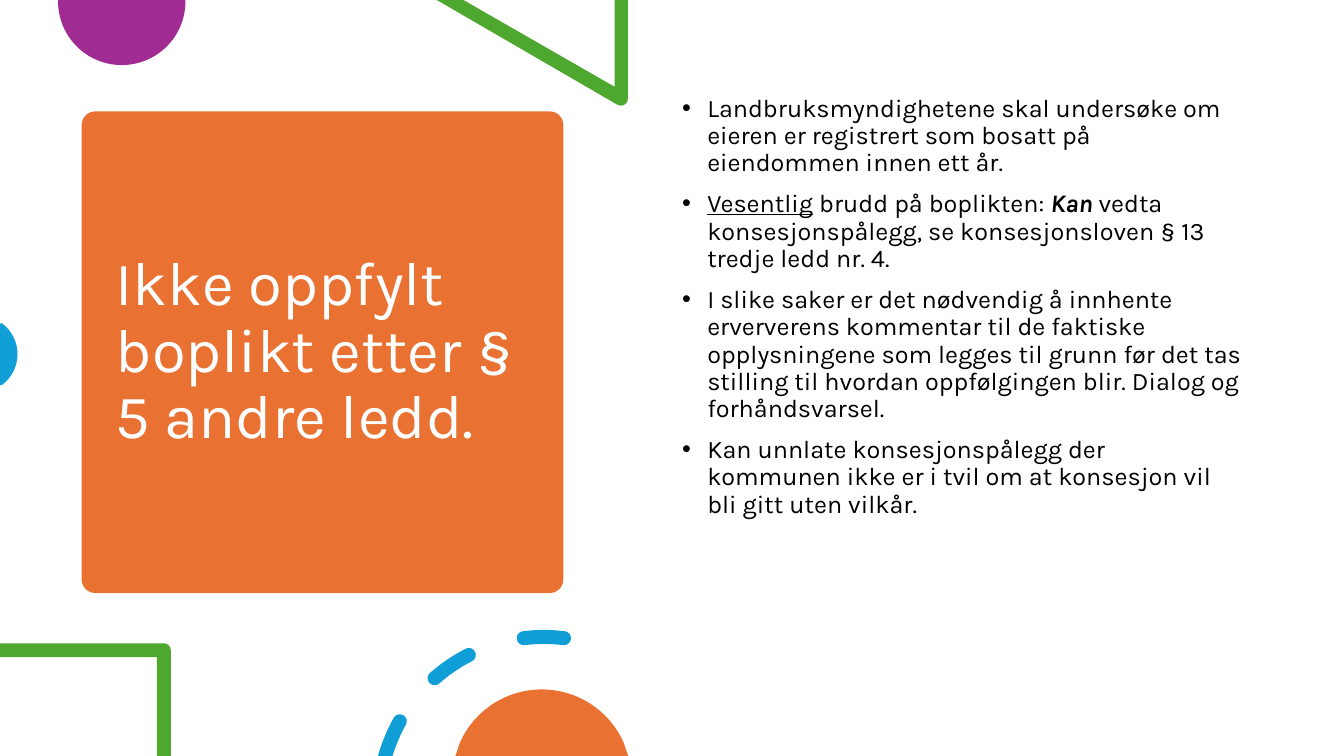
from math import cos, radians, sin, tan

from lxml.etree import SubElement
from pptx import Presentation
from pptx.dml.color import RGBColor
from pptx.enum.shapes import MSO_SHAPE
from pptx.enum.text import MSO_ANCHOR, MSO_AUTO_SIZE, PP_ALIGN
from pptx.oxml.ns import qn
from pptx.util import Pt

SLIDE_WIDTH, SLIDE_HEIGHT = 960, 540
FONT = "Karla"
COLORS = {
    "orange": "E97132",
    "purple": "A02B93",
    "green": "4EA72E",
    "blue": "0F9ED5",
    "white": "FFFFFF",
    "black": "000000",
}
HEADING = "Ikke oppfylt boplikt etter § 5 andre ledd."
RULES = [
    [("Landbruksmyndighetene skal undersøke om eieren er registrert som bosatt på "
      "eiendommen innen ett år.", "")],
    [("Vesentlig", "underline"),
     (" brudd på boplikten: ", ""),
     ("Kan ", "strong"),
     ("vedta konsesjonspålegg, se konsesjonsloven § 13 tredje ledd nr. 4.", "")],
    [("I slike saker er det nødvendig å innhente erververens kommentar til de "
      "faktiske opplysningene som legges til grunn før det tas stilling til hvordan "
      "oppfølgingen blir. Dialog og forhåndsvarsel.", "")],
    [("Kan unnlate konsesjonspålegg der kommunen ikke er i tvil om at konsesjon vil "
      "bli gitt uten vilkår.", "")],
]


def paint(shape, color):
    shape.shadow.inherit = False
    shape.fill.solid()
    shape.fill.fore_color.rgb = RGBColor.from_string(COLORS[color])
    shape.line.fill.background()


def style_run(run, size, color):
    run.font.name = FONT
    run.font.size = Pt(size)
    run.font.color.rgb = RGBColor.from_string(COLORS[color])


def place(shape, left, top, width, height):
    shape.left, shape.top = Pt(left), Pt(top)
    shape.width, shape.height = Pt(width), Pt(height)


def corners(*points):
    return [[point] for point in points]


def bend(x, y, radius, start, end, steps=1):
    step = radians(end - start) / steps
    pull = 4 / 3 * tan(step / 4)
    nodes = []
    for index in range(steps):
        a = radians(start) + index * step
        b = a + step
        nodes.append([
            (x + radius * (cos(a) - pull * sin(a)), y + radius * (sin(a) + pull * cos(a))),
            (x + radius * (cos(b) + pull * sin(b)), y + radius * (sin(b) - pull * cos(b))),
            (x + radius * cos(b), y + radius * sin(b)),
        ])
    return nodes


def arc(x, y, radius, start, end, steps=1):
    a = radians(start)
    first = corners((x + radius * cos(a), y + radius * sin(a)))
    return first + bend(x, y, radius, start, end, steps)


def dash(x, y, radius, start, end, cut=None, half=5):
    def cap(angle, first):
        a = radians(angle)
        return bend(x + radius * cos(a), y + radius * sin(a), half, first, first + 180, 2)

    outer = arc(x, y, radius + half, start, end, 2) + cap(end, end)
    if cut:
        return outer + bend(x, y, radius - half, end, cut)
    return outer + bend(x, y, radius - half, end, start) + cap(start, start + 180)


def add_outline(slide, left, top, contours, color):
    contours = [[[(Pt(left + x), Pt(top + y)) for x, y in node] for node in contour]
                for contour in contours]
    builder = slide.shapes.build_freeform(*contours[0][0][-1], scale=1.0)
    for index, contour in enumerate(contours):
        if index:
            builder.move_to(*contour[0][-1])
        builder.add_line_segments([node[-1] for node in contour[1:]], close=True)
    shape = builder.convert_to_shape()
    segments = list(shape._element.iter(qn("a:lnTo")))
    nodes = [node for contour in contours for node in contour[1:]]
    for segment, node in zip(segments, nodes):
        if len(node) == 3:
            segment.tag = qn("a:cubicBezTo")
            segment.remove(segment[0])
            for x, y in node:
                SubElement(segment, qn("a:pt"), x=str(x - shape.left), y=str(y - shape.top))
    paint(shape, color)


def add_heading(slide, left, top, side):
    panel = slide.shapes.add_shape(
        MSO_SHAPE.ROUNDED_RECTANGLE, Pt(left), Pt(top), Pt(side), Pt(side))
    panel.adjustments[0] = 0.028
    paint(panel, "orange")
    title = slide.shapes.title
    title._element.addprevious(panel._element)
    place(title, left + 17, top + 8, side - 34, side - 16)
    frame = title.text_frame
    frame.text = HEADING
    frame.word_wrap = True
    frame.auto_size = MSO_AUTO_SIZE.NONE
    frame.vertical_anchor = MSO_ANCHOR.MIDDLE
    paragraph = frame.paragraphs[0]
    paragraph.alignment = PP_ALIGN.LEFT
    paragraph.line_spacing = 0.9
    style_run(paragraph.runs[0], 44, "white")


def add_rules(slide, left, top, width, height):
    body = slide.placeholders[1]
    place(body, left, top, width, height)
    frame = body.text_frame
    frame.word_wrap = True
    frame.auto_size = MSO_AUTO_SIZE.NONE
    frame.vertical_anchor = MSO_ANCHOR.TOP
    for index, rule in enumerate(RULES):
        paragraph = frame.add_paragraph() if index else frame.paragraphs[0]
        paragraph.alignment = PP_ALIGN.LEFT
        paragraph.line_spacing = 0.9
        paragraph.space_before = Pt(10)
        properties = paragraph._p.get_or_add_pPr()
        properties.set("marL", str(Pt(18)))
        properties.set("indent", str(-Pt(18)))
        SubElement(properties, qn("a:buFont")).set("typeface", "Arial")
        SubElement(properties, qn("a:buChar")).set("char", "•")
        for words, emphasis in rule:
            run = paragraph.add_run()
            run.text = words
            style_run(run, 18, "black")
            if emphasis == "underline":
                run.font.underline = True
            if emphasis == "strong":
                run.font.bold = run.font.italic = True


def add_top_decor(slide, left, top):
    disc = corners((132.5, 0), (41.5, 0)) + arc(87, 1, 45.5, 180, 0, 2)
    add_outline(slide, left, top, [disc], "purple")
    triangle = corners((448.5, 0), (439, 0), (439, 62), (331, 0), (312, 0))
    triangle += arc(443.5, 70.5, 5, 120, 90) + bend(443.5, 70.5, 5, 90, 0)
    add_outline(slide, left, top, [triangle], "green")


def add_side_decor(slide, left, middle):
    disc = corners((0, -22), (0, 22)) + arc(-15, 0, 27.5, 53, -53, 2)
    add_outline(slide, left, middle, [disc], "blue")


def add_bottom_decor(slide, left, bottom):
    square = arc(117, -75.5, 5, 0, -90)
    square += corners((0, -80.5), (0, -70.5), (112, -70.5), (112, 0), (122, 0))
    add_outline(slide, left, bottom, [square], "green")
    spans = [(195.6, 209.3, 197), (228.6, 243), (263, 277)]
    dashes = [dash(388.5, 33, 118, *span) for span in spans]
    add_outline(slide, left, bottom, dashes, "blue")
    dome = arc(387, 16.5, 64, 204, 336, 2) + corners((448.7, 0), (325.3, 0))
    add_outline(slide, left, bottom, [dome], "orange")


def main():
    deck = Presentation()
    deck.slide_width, deck.slide_height = Pt(SLIDE_WIDTH), Pt(SLIDE_HEIGHT)
    slide = deck.slides.add_slide(deck.slide_layouts[1])
    add_heading(slide, 58.4, 79.6, 344)
    add_top_decor(slide, 0, 0)
    add_side_decor(slide, 0, 253)
    add_rules(slide, 480, 64.6, 414, 385)
    add_bottom_decor(slide, 0, SLIDE_HEIGHT)
    deck.save("out.pptx")


if __name__ == "__main__":
    main()
